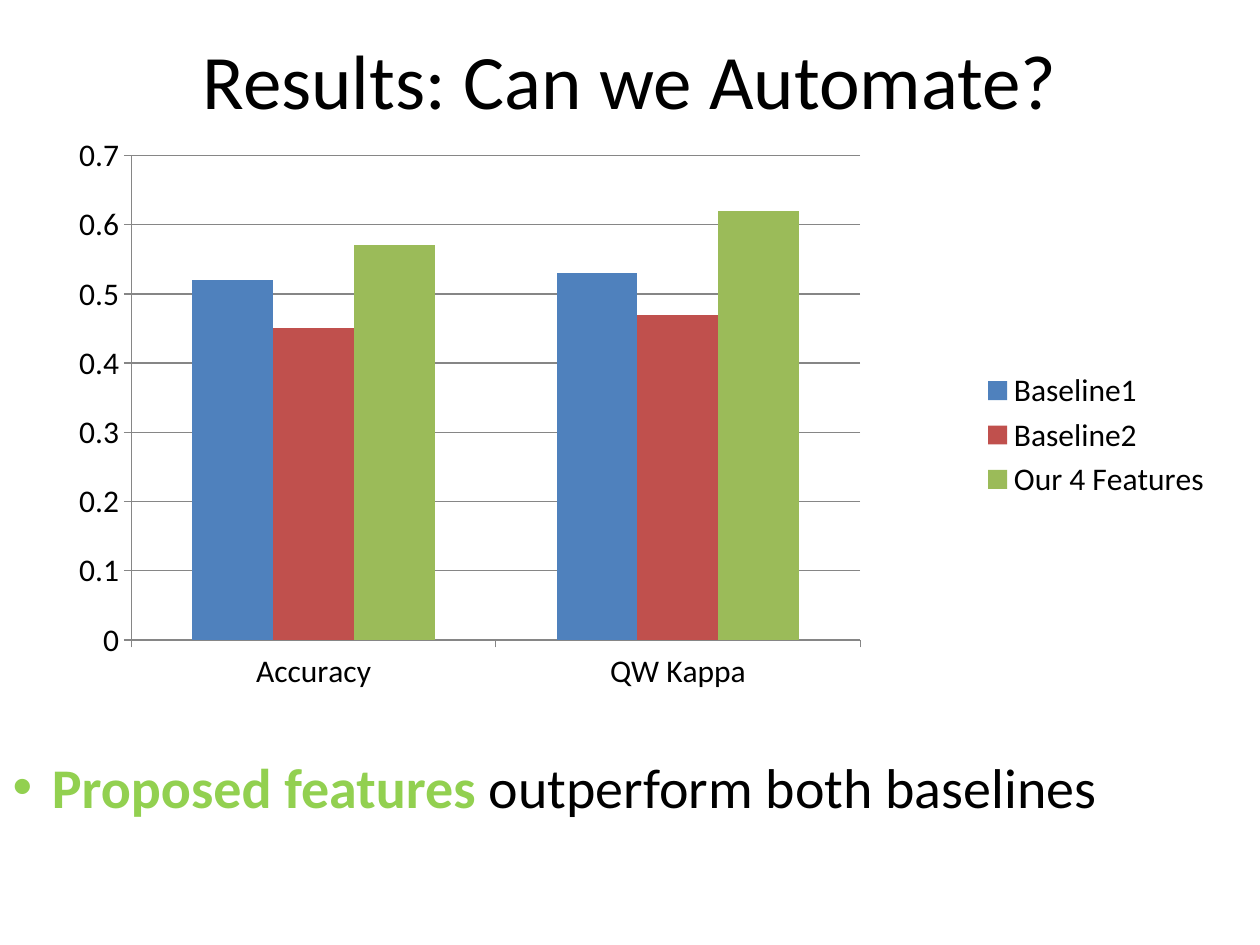
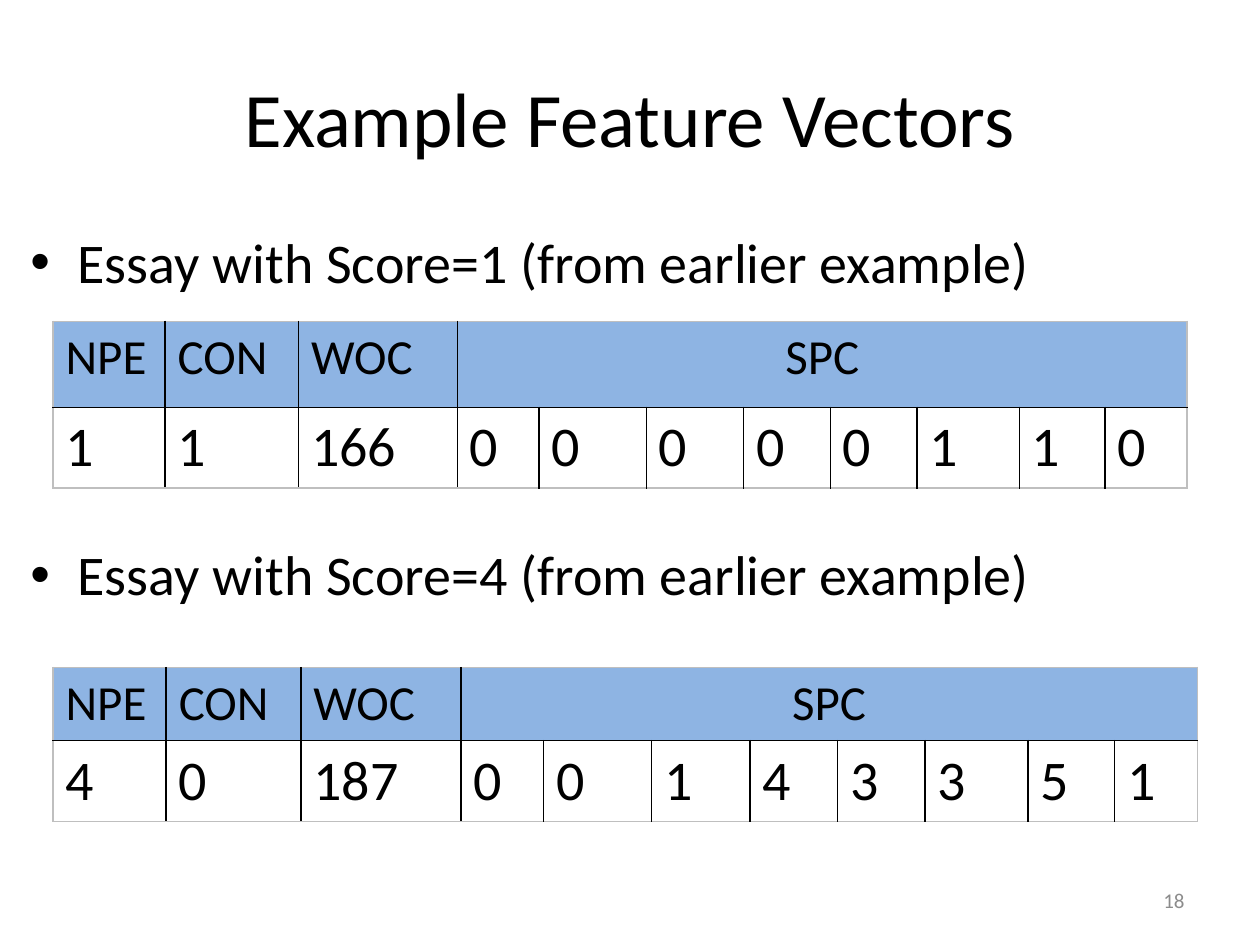
from lxml.etree import SubElement
from pptx import Presentation
from pptx.chart.data import CategoryChartData
from pptx.dml.color import RGBColor
from pptx.enum.chart import XL_CHART_TYPE, XL_LEGEND_POSITION, XL_TICK_MARK
from pptx.enum.text import MSO_ANCHOR, MSO_AUTO_SIZE, PP_ALIGN
from pptx.oxml import parse_xml
from pptx.oxml.ns import nsdecls, qn
from pptx.util import Cm, Pt

FONT = "Calibri"
BLACK, GREY, EDGE = "000000", "8C8C8C", "BFBFBF"
HEADER, HIGHLIGHT, AXIS = "8EB4E3", "92D050", "868686"


def rgb(value):
    return RGBColor.from_string(value)


def format_font(font, size, color=BLACK, bold=False):
    font.name, font.size, font.bold = FONT, Pt(size), bold
    font.color.rgb = rgb(color)


def write(paragraph, text, size=32, color=BLACK, bold=False, align=PP_ALIGN.LEFT):
    paragraph.alignment = align
    run = paragraph.add_run()
    run.text = text
    format_font(run.font, size, color, bold)


def place(shape, box):
    shape.left, shape.top, shape.width, shape.height = (Cm(value) for value in box)


def draw_border(cell, side, color):
    properties = cell._tc.get_or_add_tcPr()
    line = SubElement(properties, qn(f"a:ln{side}"), w=str(Pt(1)))
    fill = SubElement(line, qn("a:solidFill"))
    SubElement(fill, qn("a:srgbClr"), val=color)


class Deck:
    def __init__(self):
        self.presentation = Presentation()
        self.presentation.slide_width = Cm(25.4)
        self.presentation.slide_height = Cm(19.05)
        self.slide = None

    def add_slide(self, title, top):
        layout = self.presentation.slide_layouts[1]
        self.slide = self.presentation.slides.add_slide(layout)
        shape = self.slide.shapes.title
        place(shape, (1.27, top, 22.86, 3.18))
        shape.text_frame.vertical_anchor = MSO_ANCHOR.MIDDLE
        write(shape.text_frame.paragraphs[0], title, size=44, align=PP_ALIGN.CENTER)

    def add_bullets(self, box, items, indent, spaces):
        """Each item is a list of (text, format) pairs; spaces are points before it."""
        shape = self.slide.placeholders[1]
        place(shape, box)
        frame = shape.text_frame
        frame.auto_size = MSO_AUTO_SIZE.NONE
        for index, (runs, space) in enumerate(zip(items, spaces)):
            paragraph = frame.add_paragraph() if index else frame.paragraphs[0]
            paragraph.space_before = Pt(space)
            for text, style in runs:
                write(paragraph, text, **style)
            properties = paragraph._p.get_or_add_pPr()
            properties.set("marL", str(Cm(indent)))
            properties.set("indent", str(-Cm(indent)))
            SubElement(properties, qn("a:buFont"), typeface="Arial")
            SubElement(properties, qn("a:buChar"), char="•")

    def add_column_chart(self, box, categories, series, plot_area):
        data = CategoryChartData()
        data.categories = categories
        for name, values, _ in series:
            data.add_series(name, values)
        chart = self.slide.shapes.add_chart(
            XL_CHART_TYPE.COLUMN_CLUSTERED, *(Cm(value) for value in box), data).chart
        format_font(chart.font, 18)
        chart.has_title = False
        chart.has_legend = True
        chart.legend.position = XL_LEGEND_POSITION.RIGHT
        chart.legend.include_in_layout = False

        plot = chart.plots[0]
        plot.gap_width, plot.overlap, plot.vary_by_categories = 150, 0, False
        for column, (_, _, color) in zip(plot.series, series):
            column.format.fill.solid()
            column.format.fill.fore_color.rgb = rgb(color)

        chart.value_axis.minimum_scale, chart.value_axis.maximum_scale = 0, 0.7
        chart.value_axis.major_unit = 0.1
        chart.value_axis.has_major_gridlines = True
        gridlines = chart.value_axis.major_gridlines
        for axis in (chart.category_axis, chart.value_axis):
            axis.major_tick_mark = XL_TICK_MARK.OUTSIDE
        for part in (chart.category_axis, chart.value_axis, gridlines):
            part.format.line.color.rgb = rgb(AXIS)
            part.format.line.width = Pt(0.75)

        # Fix the inner plot area as fractions of the chart
        sizes = "".join(f'<c:{key} val="{value}"/>' for key, value in zip("xywh", plot_area))
        layout = parse_xml(
            f'<c:layout {nsdecls("c")}><c:manualLayout><c:layoutTarget val="inner"/>'
            f'<c:xMode val="edge"/><c:yMode val="edge"/>{sizes}</c:manualLayout></c:layout>')
        area = chart._chartSpace.chart.plotArea
        for previous in area.findall(qn("c:layout")):
            area.remove(previous)
        area.insert(0, layout)

    def add_feature_table(self, left, top, column_widths, row_heights, headers, values):
        table = self.slide.shapes.add_table(
            2, len(values), Cm(left), Cm(top),
            Cm(sum(column_widths)), Cm(sum(row_heights))).table
        table.first_row = table.horz_banding = False
        for column, width in zip(table.columns, column_widths):
            column.width = Cm(width)
        for row, height in zip(table.rows, row_heights):
            row.height = Cm(height)

        # The last header spans the remaining columns
        last_header, last_column = len(headers) - 1, len(values) - 1
        table.cell(0, last_header).merge(table.cell(0, last_column))
        for row, texts in enumerate((headers, values)):
            for column, text in enumerate(texts):
                cell = table.cell(row, column)
                is_span = row == 0 and column == last_header
                outer = {"L": column == 0, "R": column == len(texts) - 1,
                         "T": row == 0, "B": row == 1}
                for side, is_outer in outer.items():
                    draw_border(cell, side, EDGE if is_outer else BLACK)
                if row == 0:
                    cell.fill.solid()
                    cell.fill.fore_color.rgb = rgb(HEADER)
                else:
                    cell.fill.background()
                write(cell.text_frame.paragraphs[0], text, size=32 if row else 28,
                      align=PP_ALIGN.CENTER if is_span else PP_ALIGN.LEFT)

    def add_page_number(self, number):
        shape = self.slide.shapes.add_textbox(Cm(18.2), Cm(17.65), Cm(5.93), Cm(1.01))
        shape.text_frame.word_wrap = True
        shape.text_frame.vertical_anchor = MSO_ANCHOR.MIDDLE
        write(shape.text_frame.paragraphs[0], number, size=12, color=GREY,
              align=PP_ALIGN.RIGHT)


def build_results(deck):
    deck.add_slide("Results: Can we Automate?", top=0)
    deck.add_column_chart(
        (0.99, 2.51, 23.7, 12.52), ["Accuracy", "QW Kappa"],
        [("Baseline1", (0.52, 0.53), "4F81BD"),
         ("Baseline2", (0.45, 0.47), "C0504D"),
         ("Our 4 Features", (0.57, 0.62), "9BBB59")],
        plot_area=(0.07, 0.05, 0.62, 0.78))
    deck.add_bullets(
        (0, 15.04, 24.69, 1.63),
        [[("Proposed features ", {"color": HIGHLIGHT, "bold": True}),
          ("outperform both baselines", {})]],
        indent=0.79, spaces=[0])


def build_feature_vectors(deck):
    deck.add_slide("Example Feature Vectors", top=0.76)
    deck.add_page_number("18")
    deck.add_bullets(
        (0.36, 4.45, 24.64, 12.57),
        [[(f"Essay with Score={score} (from earlier example)", {})] for score in (1, 4)],
        indent=0.95, spaces=[6.4, 140.4])

    headers = ["NPE", "CON", "WOC", "SPC"]
    widths = [2.26, 2.69, 3.2, 1.65, 2.16, 1.96, 1.75, 1.75, 2.06, 1.73, 1.65]
    wider = [width * 23.07 / sum(widths) for width in widths]
    deck.add_feature_table(1.07, 13.46, wider, (1.47, 1.63), headers,
                           ["4", "0", "187", *"00143351"])
    deck.add_feature_table(1.07, 6.48, widths, (1.73, 1.63), headers,
                           ["1", "1", "166", *"00000110"])


def main():
    deck = Deck()
    build_results(deck)
    build_feature_vectors(deck)
    deck.presentation.save("out.pptx")


if __name__ == "__main__":
    main()
